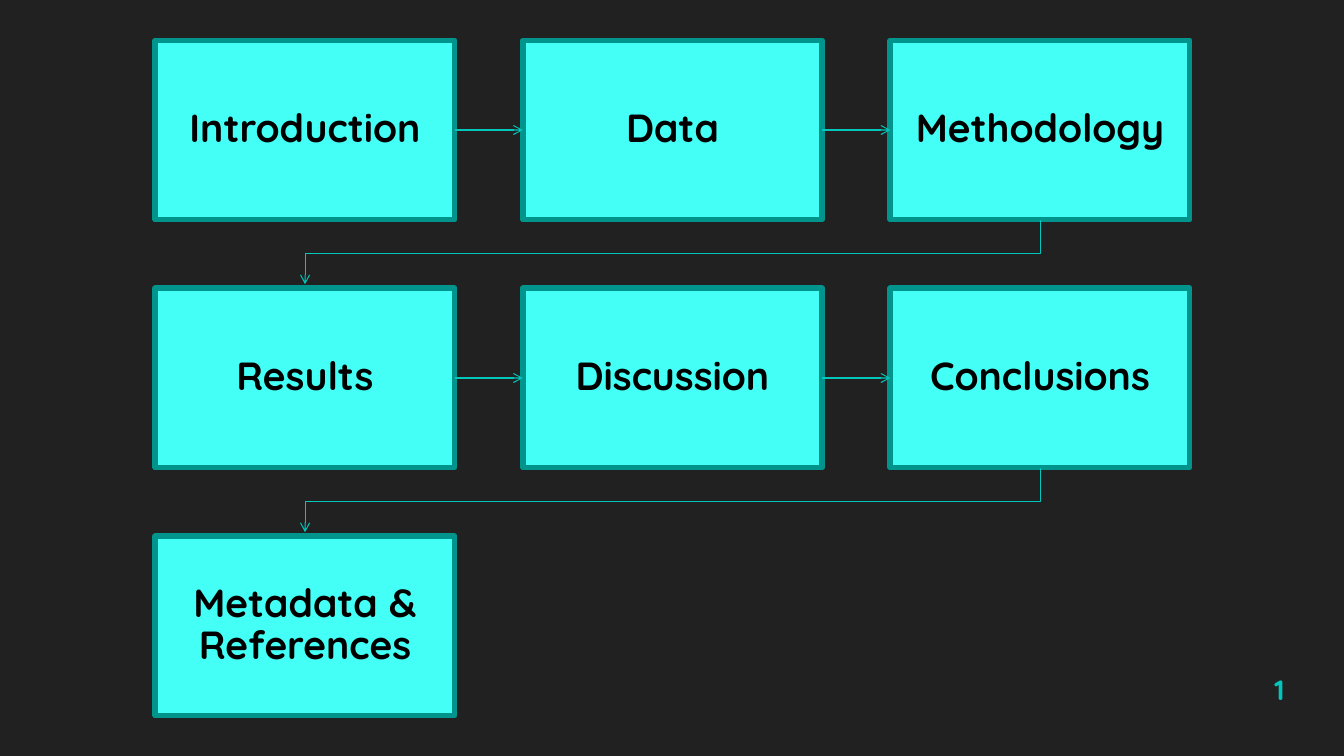
"""Build a slide showing the report sections as a snaking flow of boxes."""
from dataclasses import dataclass

from lxml import etree
from pptx import Presentation
from pptx.dml.color import RGBColor
from pptx.enum.shapes import MSO_CONNECTOR, MSO_SHAPE
from pptx.enum.text import MSO_ANCHOR, PP_ALIGN
from pptx.oxml.ns import qn
from pptx.util import Inches, Pt

RECT, STRAIGHT = MSO_SHAPE.RECTANGLE, MSO_CONNECTOR.STRAIGHT
MIDDLE, BOTTOM = MSO_ANCHOR.MIDDLE, MSO_ANCHOR.BOTTOM
CENTER, RIGHT = PP_ALIGN.CENTER, PP_ALIGN.RIGHT

FONT = "Quicksand"
BACKGROUND, BOX_FILL, BOX_LINE = "212121", "44FFF5", "00948C"
ACCENT, BLACK = "00C6BB", "000000"

COLUMNS = 3
LEFT, TOP = 1.54, 0.4
BOX_W, BOX_H = 2.97, 1.78
STEP_X, STEP_Y = 3.645, 2.46
ELBOW_DROP, ARROW_GAP = 0.34, 0.04


@dataclass
class Section:
    title: str
    row: int
    col: int

    @property
    def x(self) -> float:
        return LEFT + self.col * STEP_X

    @property
    def y(self) -> float:
        return TOP + self.row * STEP_Y

    @property
    def center_x(self) -> float:
        return self.x + BOX_W / 2


TITLES = ["Introduction", "Data", "Methodology", "Results", "Discussion",
          "Conclusions", "Metadata & References"]
SECTIONS = [Section(title, *divmod(i, COLUMNS)) for i, title in enumerate(TITLES)]


def rgb(color: str) -> RGBColor:
    return RGBColor.from_string(color)


def set_text(sp, text: str, *, size: float, color: str, align, anchor,
             insets: tuple, spacing: float = 1.0) -> None:
    tf = sp.text_frame
    tf.word_wrap = True
    tf.vertical_anchor = anchor
    tf.margin_left, tf.margin_top, tf.margin_right, tf.margin_bottom = map(Inches, insets)
    p = tf.paragraphs[0]
    p.alignment = align
    p.line_spacing = spacing
    r = p.add_run()
    r.text = text
    r.font.name = FONT
    r.font.size = Pt(size)
    r.font.bold = True
    r.font.color.rgb = rgb(color)


def add_box(s, section: Section):
    sp = s.shapes.add_shape(RECT, Inches(section.x), Inches(section.y),
                            Inches(BOX_W), Inches(BOX_H))
    sp.shadow.inherit = False
    sp.fill.solid()
    sp.fill.fore_color.rgb = rgb(BOX_FILL)
    sp.line.color.rgb = rgb(BOX_LINE)
    sp.line.width = Pt(4)
    set_text(sp, section.title, size=28, color=BLACK, align=CENTER,
             anchor=MIDDLE, insets=(0.22,) * 4, spacing=0.9)
    return sp


def style_arrow(sp) -> None:
    sp.line.color.rgb = rgb(ACCENT)
    sp.line.width = Pt(0.75)
    etree.SubElement(sp.line._get_or_add_ln(), qn("a:tailEnd"), type="arrow")


def add_straight_arrow(s, source, target) -> None:
    cxn = s.shapes.add_connector(STRAIGHT, 0, 0, 0, 0)
    cxn.begin_connect(source, 3)
    cxn.end_connect(target, 1)
    style_arrow(cxn)
    etree.SubElement(cxn._element.spPr, qn("a:effectLst"))


def add_elbow_arrow(s, source: Section, target: Section) -> None:
    start_y = source.y + BOX_H
    turn_y = start_y + ELBOW_DROP
    points = [(source.center_x, turn_y), (target.center_x, turn_y),
              (target.center_x, target.y - ARROW_GAP)]
    builder = s.shapes.build_freeform(Inches(source.center_x), Inches(start_y))
    builder.add_line_segments([(Inches(x), Inches(y)) for x, y in points], close=False)
    sp = builder.convert_to_shape()
    sp.shadow.inherit = False
    sp.fill.background()
    style_arrow(sp)


def main() -> None:
    prs = Presentation()
    prs.slide_width, prs.slide_height = Inches(13.33), Inches(7.5)
    s = prs.slides.add_slide(prs.slide_layouts[6])
    s.background.fill.solid()
    s.background.fill.fore_color.rgb = rgb(BACKGROUND)

    boxes = [add_box(s, section) for section in SECTIONS]
    for i, (source, target) in enumerate(zip(SECTIONS, SECTIONS[1:])):
        if source.row == target.row:
            add_straight_arrow(s, boxes[i], boxes[i + 1])
        else:
            add_elbow_arrow(s, source, target)

    number = s.shapes.add_textbox(Inches(11.68), Inches(6.47), Inches(1.16), Inches(0.54))
    set_text(number, "1", size=20, color=ACCENT, align=RIGHT, anchor=BOTTOM,
             insets=(0.1, 0.05, 0.1, 0.01))
    prs.save("out.pptx")


if __name__ == "__main__":
    main()
